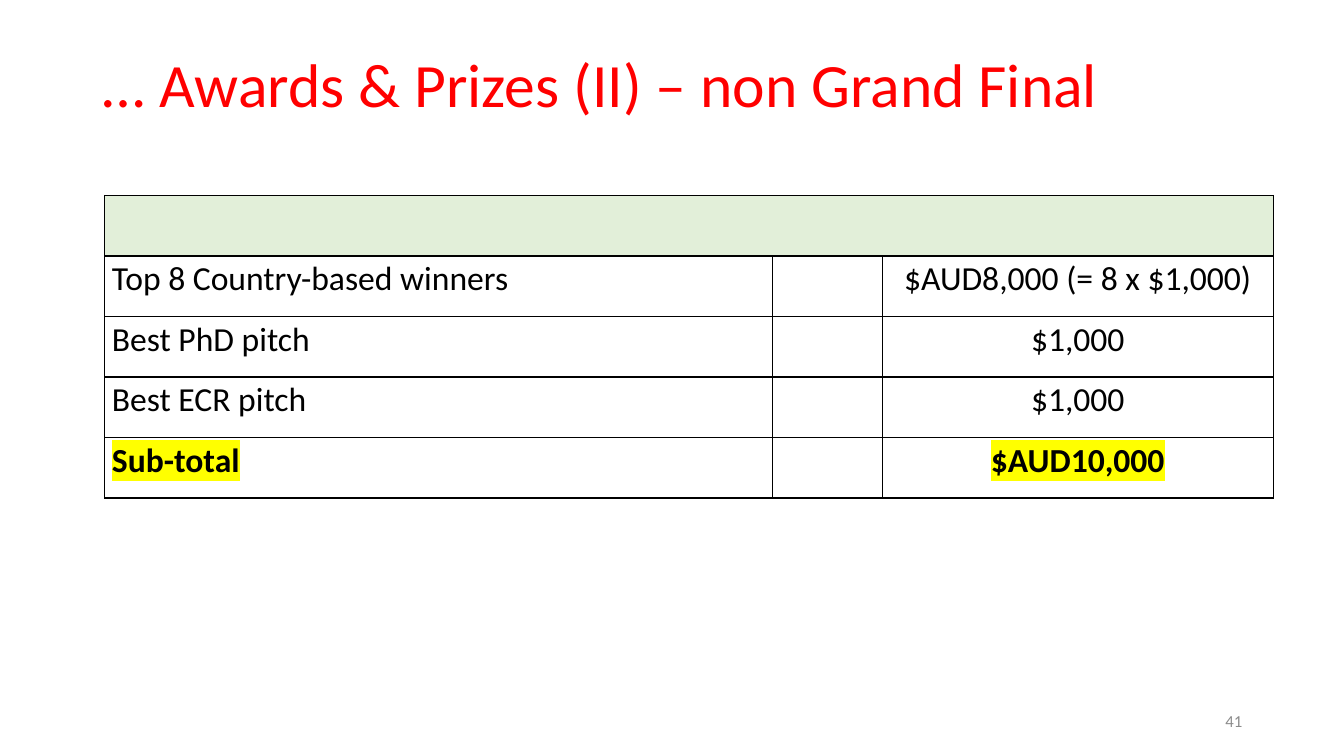
import pptx
import pptx.util
import pptx.dml.color
import pptx.enum.text
import pptx.oxml
import pptx.oxml.ns

Inches, Pt = pptx.util.Inches, pptx.util.Pt
RGB = pptx.dml.color.RGBColor
Align = pptx.enum.text.PP_ALIGN
Anchor = pptx.enum.text.MSO_ANCHOR

RED = RGB(0xFF, 0x00, 0x00)
BLACK = RGB(0x00, 0x00, 0x00)
GREY = RGB(0x8C, 0x8C, 0x8C)
GREEN = RGB(0xE2, 0xEF, 0xD9)
YELLOW = RGB(0xFF, 0xFF, 0x00)
FONT = "Calibri"

TITLE = "… Awards & Prizes (II) – non Grand Final"
PAGE = "41"
PRIZES = [
    ("", "", ""),
    ("Top 8 Country-based winners", "", "$AUD8,000 (= 8 x $1,000)"),
    ("Best PhD pitch", "", "$1,000"),
    ("Best ECR pitch", "", "$1,000"),
    ("Sub-total", "", "$AUD10,000"),
]
COLS = (6.62, 1.09, 3.88)
ALIGNS = (Align.JUSTIFY, Align.CENTER, Align.CENTER)
ROW = 0.6
LEFT, TOP = 1.04, 1.94


def style(para, size, color, align, bold=None):
    para.alignment = align
    for run in para.runs:
        run.font.name = FONT
        run.font.size = Pt(size)
        run.font.color.rgb = color
        run.font.bold = bold


def label(slide, text, box, size, color, align):
    frame = slide.shapes.add_textbox(*map(Inches, box)).text_frame
    frame.word_wrap = True
    frame.vertical_anchor = Anchor.MIDDLE
    frame.text = text
    para = frame.paragraphs[0]
    style(para, size, color, align)
    return para


def mark(run):
    fill = run.font.fill._xPr.find(pptx.oxml.ns.qn("a:solidFill"))
    fill.addnext(pptx.oxml.parse_xml(
        f'<a:highlight {pptx.oxml.ns.nsdecls("a")}>'
        f'<a:srgbClr val="{YELLOW}"/></a:highlight>'))


def border(cell):
    props = cell._tc.get_or_add_tcPr()
    for spot, side in enumerate("LRTB"):
        props.insert(spot, pptx.oxml.parse_xml(
            f'<a:ln{side} {pptx.oxml.ns.nsdecls("a")} w="{Pt(1)}">'
            f'<a:solidFill><a:srgbClr val="{BLACK}"/></a:solidFill></a:ln{side}>'))


def fill(cell, text, align, total):
    cell.margin_left = cell.margin_right = Inches(0.07)
    cell.margin_top = cell.margin_bottom = 0
    cell.text = text
    para = cell.text_frame.paragraphs[0]
    para.line_spacing = 1.07
    para.space_after = Pt(8)
    style(para, 24, BLACK, align, total)
    if total:
        for run in para.runs:
            mark(run)


def main():
    deck = pptx.Presentation()
    deck.slide_width, deck.slide_height = Inches(13.33), Inches(7.5)
    slide = deck.slides.add_slide(deck.slide_layouts[6])

    head = label(slide, TITLE, (0.92, 0.4, 11.5, 0.94), 44, RED, Align.LEFT)
    head.line_spacing = 0.9
    label(slide, PAGE, (9.42, 6.95, 3, 0.4), 12, GREY, Align.RIGHT)

    size = map(Inches, (LEFT, TOP, sum(COLS), ROW * len(PRIZES)))
    table = slide.shapes.add_table(len(PRIZES), len(COLS), *size).table
    table.first_row = table.horz_banding = False
    for col, width in zip(table.columns, COLS):
        col.width = Inches(width)
    for r, row in enumerate(PRIZES):
        table.rows[r].height = Inches(ROW)
        for c, text in enumerate(row):
            cell = table.cell(r, c)
            fill(cell, text, ALIGNS[c], r == len(PRIZES) - 1)
            if r == 0:
                cell.fill.solid()
                cell.fill.fore_color.rgb = GREEN
            else:
                cell.fill.background()
            border(cell)
    table.cell(0, 0).merge(table.cell(0, len(COLS) - 1))
    deck.save("out.pptx")


if __name__ == "__main__":
    main()
